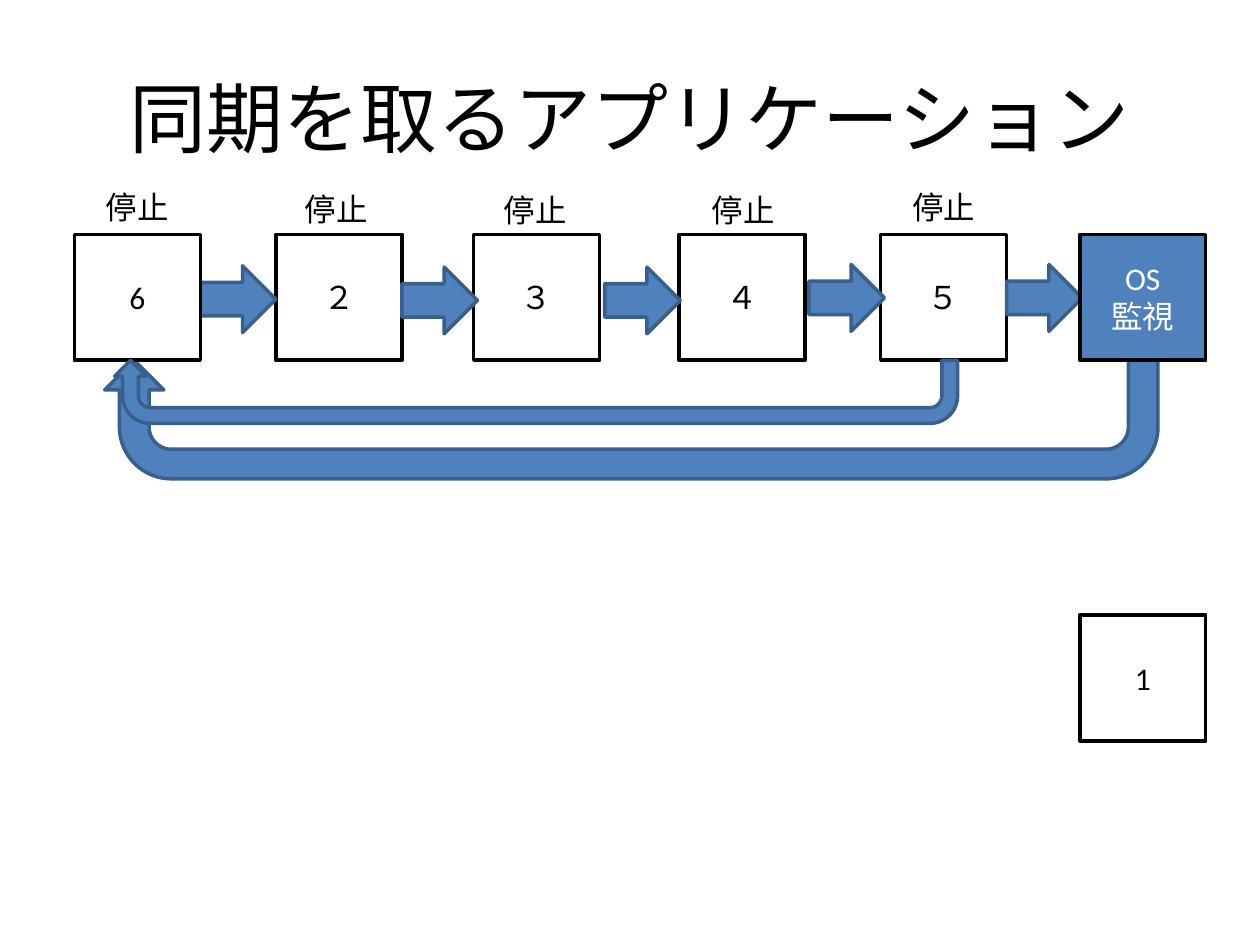
from pptx import Presentation
from pptx.dml.color import RGBColor
from pptx.enum.shapes import MSO_SHAPE
from pptx.enum.text import MSO_ANCHOR, MSO_AUTO_SIZE, PP_ALIGN
from pptx.util import Inches, Pt

RECT = MSO_SHAPE.RECTANGLE
RIGHT = MSO_SHAPE.RIGHT_ARROW
UTURN = MSO_SHAPE.U_TURN_ARROW
MIDDLE = MSO_ANCHOR.MIDDLE
CENTER = PP_ALIGN.CENTER
LEFT = PP_ALIGN.LEFT
FIT = MSO_AUTO_SIZE.SHAPE_TO_FIT_TEXT

COLORS = {"ink": "000000", "paper": "FFFFFF", "blue": "4F81BD", "edge": "3A5F8C"}
SIDE = 1
STAGES = [
    ("２", 1.6, 0.13, 0.02),
    ("３", 3.17, 0.14, 0.03),
    ("４", 4.8, 0.16, 0.03),
    ("５", 6.4, 0.15, 0),
]
ARROWS = [(1, 0.25), (2.6, 0.26), (4.21, 0.26), (5.83, 0.24), (7.4, 0.24)]


def color(name):
    return RGBColor.from_string(COLORS[name])


def write(frame, text, size, ink="ink", align=CENTER):
    frame.text = text
    for para in frame.paragraphs:
        para.alignment = align
        para.font.name = "Calibri"
        para.font.size = Pt(size)
        para.font.color.rgb = color(ink)


def add_form(slide, kind, box, fill, line):
    form = slide.shapes.add_shape(kind, *map(Inches, box))
    form.shadow.inherit = False
    form.fill.solid()
    form.fill.fore_color.rgb = color(fill)
    form.line.color.rgb = color(line)
    form.line.width = Pt(2)
    return form


def add_stage(slide, left, top, text, fill="paper", ink="ink"):
    stage = add_form(slide, RECT, (left, top, SIDE, SIDE), fill, "ink")
    stage.text_frame.vertical_anchor = MIDDLE
    write(stage.text_frame, text, 18, ink)


def add_label(slide, left, top):
    label = slide.shapes.add_textbox(*map(Inches, (left, top, 0.71, 0.4)))
    label.text_frame.word_wrap = False
    label.text_frame.auto_size = FIT
    write(label.text_frame, "停止", 18, align=LEFT)


def add_return(slide, left, top, width, height):
    arrow = add_form(slide, UTURN, (left, top, width, height), "blue", "edge")
    arrow.adjustments[4] = 1
    arrow.rotation = 180


def add_title(slide, left, top, width, height):
    title = slide.shapes.add_textbox(*map(Inches, (left, top, width, height)))
    title.text_frame.word_wrap = True
    title.text_frame.vertical_anchor = MIDDLE
    write(title.text_frame, "同期を取るアプリケーション", 44)


def add_flow(slide, left, top):
    base = top + SIDE
    last = left + 7.98
    for text, step, _, _ in STAGES:
        add_stage(slide, left + step, top, text)
    for step, drop in ARROWS:
        add_form(slide, RIGHT, (left + step, top + drop, 0.6, 0.53), "blue", "edge")
    add_return(slide, left + 0.24, base, 8.36, 0.94)
    add_stage(slide, last, top, "OS\n監視", "blue", "paper")
    add_label(slide, left + 0.15, top - 0.42)
    for _, step, inset, drop in STAGES:
        add_label(slide, left + step + inset, top - 0.42 + drop)
    add_stage(slide, left, top, "6")
    add_stage(slide, last, top + 3.02, "1")
    add_return(slide, left + 0.32, base, 6.69, 0.5)


def main():
    deck = Presentation()
    deck.slide_width = Inches(10)
    deck.slide_height = Inches(7.5)
    slide = deck.slides.add_slide(deck.slide_layouts[6])
    add_title(slide, 0.5, 0.3, 9, 1.25)
    add_flow(slide, 0.59, 1.86)
    deck.save("out.pptx")


if __name__ == "__main__":
    main()
